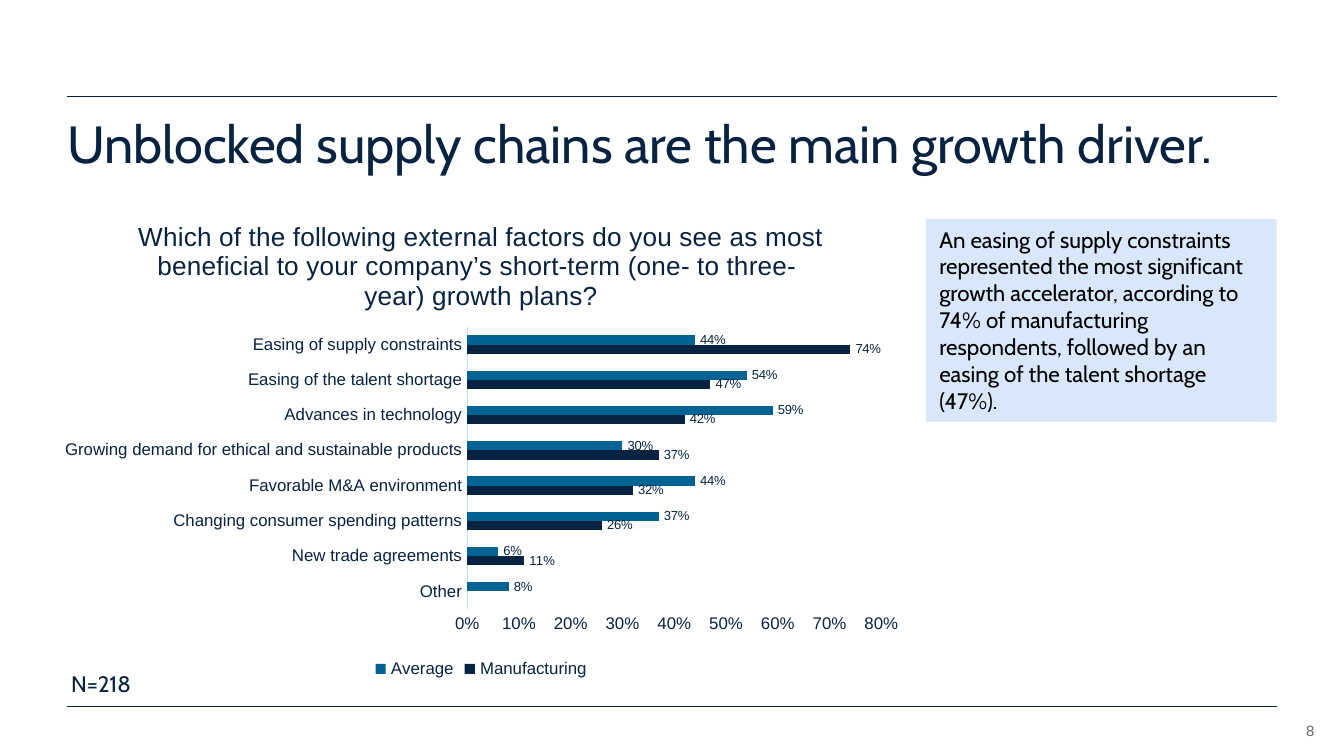
from dataclasses import dataclass

from lxml import etree
from pptx import Presentation
from pptx.chart.data import CategoryChartData
from pptx.dml.color import RGBColor
from pptx.enum.chart import XL_CHART_TYPE, XL_LABEL_POSITION, XL_LEGEND_POSITION, XL_TICK_MARK
from pptx.enum.shapes import MSO_CONNECTOR, MSO_SHAPE
from pptx.enum.text import MSO_ANCHOR, MSO_AUTO_SIZE, PP_ALIGN
from pptx.oxml import parse_xml
from pptx.oxml.ns import nsdecls, qn
from pptx.util import Inches, Pt


@dataclass(frozen=True)
class Theme:
    navy: RGBColor = RGBColor.from_string("082241")
    blue: RGBColor = RGBColor.from_string("006393")
    pale: RGBColor = RGBColor.from_string("D8E8FA")
    axis: RGBColor = RGBColor.from_string("C5DCF8")
    grey: RGBColor = RGBColor.from_string("666666")
    black: RGBColor = RGBColor.from_string("000000")
    heading: str = "Cabin"
    chart: str = "Arial"
    title_size: int = 28
    chart_title_size: int = 14
    body_size: int = 12
    axis_size: int = 9
    page_size: int = 8
    label_size: int = 7


theme = Theme()


def style(font, name, size, color):
    font.name = name
    font.size = Pt(size)
    font.bold = False
    font.color.rgb = color


def write(frame, lines, name, size, color, align=PP_ALIGN.LEFT):
    frame.word_wrap = True
    para = frame.paragraphs[0]
    para.alignment = align
    for index, line in enumerate(lines):
        if index:
            para.add_line_break()
        span = para.add_run()
        span.text = line
        style(span.font, name, size, color)


deck = Presentation()
deck.slide_width = Inches(10)
deck.slide_height = Inches(10) * 9 // 16
page = deck.slides.add_slide(deck.slide_layouts[5])

# Rules above the title and below the content
for y in (0.72, 5.26):
    rule = page.shapes.add_connector(
        MSO_CONNECTOR.STRAIGHT, Inches(0.5), Inches(y), Inches(9.5), Inches(y))
    rule.line.color.rgb = theme.navy
    rule.line.width = Pt(0.5)
    etree.SubElement(rule.element.spPr, qn("a:effectLst"))

# Title
title = page.shapes.title
title.left, title.top = Inches(0.5), Inches(0.88)
title.width, title.height = Inches(9), Inches(0.55)
frame = title.text_frame
frame.auto_size = MSO_AUTO_SIZE.NONE
frame.vertical_anchor = MSO_ANCHOR.TOP
frame.margin_left = frame.margin_right = frame.margin_top = frame.margin_bottom = 0
write(frame, ["Unblocked supply chains are the main growth driver."],
      theme.heading, theme.title_size, theme.navy)
frame.paragraphs[0].line_spacing = 0.9

# Takeaway panel
panel = page.shapes.add_shape(
    MSO_SHAPE.RECTANGLE, Inches(6.89), Inches(1.63), Inches(2.61), Inches(1.51))
panel.shadow.inherit = False
panel.fill.solid()
panel.fill.fore_color.rgb = theme.pale
panel.line.fill.background()
panel.text_frame.vertical_anchor = MSO_ANCHOR.TOP
panel.text_frame.auto_size = MSO_AUTO_SIZE.SHAPE_TO_FIT_TEXT
write(panel.text_frame,
      ["An easing of supply constraints represented the most significant growth "
       "accelerator, according to 74% of manufacturing respondents, followed by an "
       "easing of the talent shortage (47%)."],
      theme.heading, theme.body_size, theme.black)

# Growth factors: manufacturing share, average share
factors = [
    ("Other", None, 0.08),
    ("New trade agreements", 0.11, 0.06),
    ("Changing consumer spending patterns", 0.26, 0.37),
    ("Favorable M&A environment", 0.32, 0.44),
    ("Growing demand for ethical and sustainable products", 0.37, 0.3),
    ("Advances in technology", 0.42, 0.59),
    ("Easing of the talent shortage", 0.47, 0.54),
    ("Easing of supply constraints", 0.74, 0.44),
]
names, manufacturing, average = zip(*factors)
data = CategoryChartData(number_format="0%")
data.categories = names
data.add_series("Manufacturing", manufacturing)
data.add_series("Average", average)
chart = page.shapes.add_chart(
    XL_CHART_TYPE.BAR_CLUSTERED, Inches(0.35), Inches(1.48),
    Inches(6.46), Inches(3.61), data).chart
style(chart.font, theme.chart, 10, theme.navy)

# Chart title, broken by hand and kept from wrapping
chart.has_title = True
frame = chart.chart_title.text_frame
write(frame,
      ["Which of the following external factors do you see as most ",
       "beneficial to your company’s short-term (one- to three- ",
       "year) growth plans?"],
      theme.chart, theme.chart_title_size, theme.navy, PP_ALIGN.CENTER)
frame.word_wrap = False
frame.margin_left = frame.margin_right = 0
chart.chart_title.include_in_layout = False

# Legend
chart.has_legend = True
chart.legend.position = XL_LEGEND_POSITION.BOTTOM
chart.legend.include_in_layout = False
style(chart.legend.font, theme.chart, theme.axis_size, theme.navy)

# Axes
for axis in (chart.category_axis, chart.value_axis):
    axis.major_tick_mark = axis.minor_tick_mark = XL_TICK_MARK.NONE
    axis.has_major_gridlines = False
    style(axis.tick_labels.font, theme.chart, theme.axis_size, theme.navy)
chart.category_axis.format.line.color.rgb = theme.axis
chart.category_axis.format.line.width = Pt(0.75)
scale = chart.value_axis
scale.minimum_scale, scale.maximum_scale, scale.major_unit = 0, 0.8, 0.1
scale.format.line.fill.background()
scale.tick_labels.number_format = "0%"
scale.tick_labels.number_format_is_linked = False

# Bars and their labels
plot = chart.plots[0]
plot.vary_by_categories = False
plot.gap_width = 182
plot.overlap = 0
for series, color in zip(plot.series, (theme.navy, theme.blue)):
    series.format.fill.solid()
    series.format.fill.fore_color.rgb = color
    labels = series.data_labels
    labels.show_value = True
    labels.position = XL_LABEL_POSITION.OUTSIDE_END
    labels.number_format = "0%"
    labels.number_format_is_linked = False
    style(labels.font, theme.chart, theme.label_size, theme.navy)

# Fixed plot area, as fractions of the chart
area = chart.element.find(".//" + qn("c:plotArea"))
for old in area.findall(qn("c:layout")):
    area.remove(old)
places = "".join(f'<c:{key} val="{value}"/>' for key, value in (
    ("layoutTarget", "inner"), ("xMode", "edge"), ("yMode", "edge"),
    ("x", 0.484), ("y", 0.264), ("w", 0.477), ("h", 0.582)))
area.insert(0, parse_xml(
    f'<c:layout {nsdecls("c")}><c:manualLayout>{places}</c:manualLayout></c:layout>'))

# Sample size
sample = page.shapes.add_textbox(Inches(0.43), Inches(4.94), Inches(1.81), Inches(0.3))
sample.text_frame.auto_size = MSO_AUTO_SIZE.SHAPE_TO_FIT_TEXT
write(sample.text_frame, ["N=218"], theme.heading, theme.body_size, theme.navy)

# Page number
number = page.shapes.add_textbox(Inches(9.31), Inches(5.32), Inches(0.47), Inches(0.18))
frame = number.text_frame
frame.margin_left = frame.margin_right = frame.margin_top = frame.margin_bottom = 0
frame.vertical_anchor = MSO_ANCHOR.BOTTOM
write(frame, ["8"], theme.chart, theme.page_size, theme.grey, PP_ALIGN.RIGHT)

deck.save("out.pptx")
